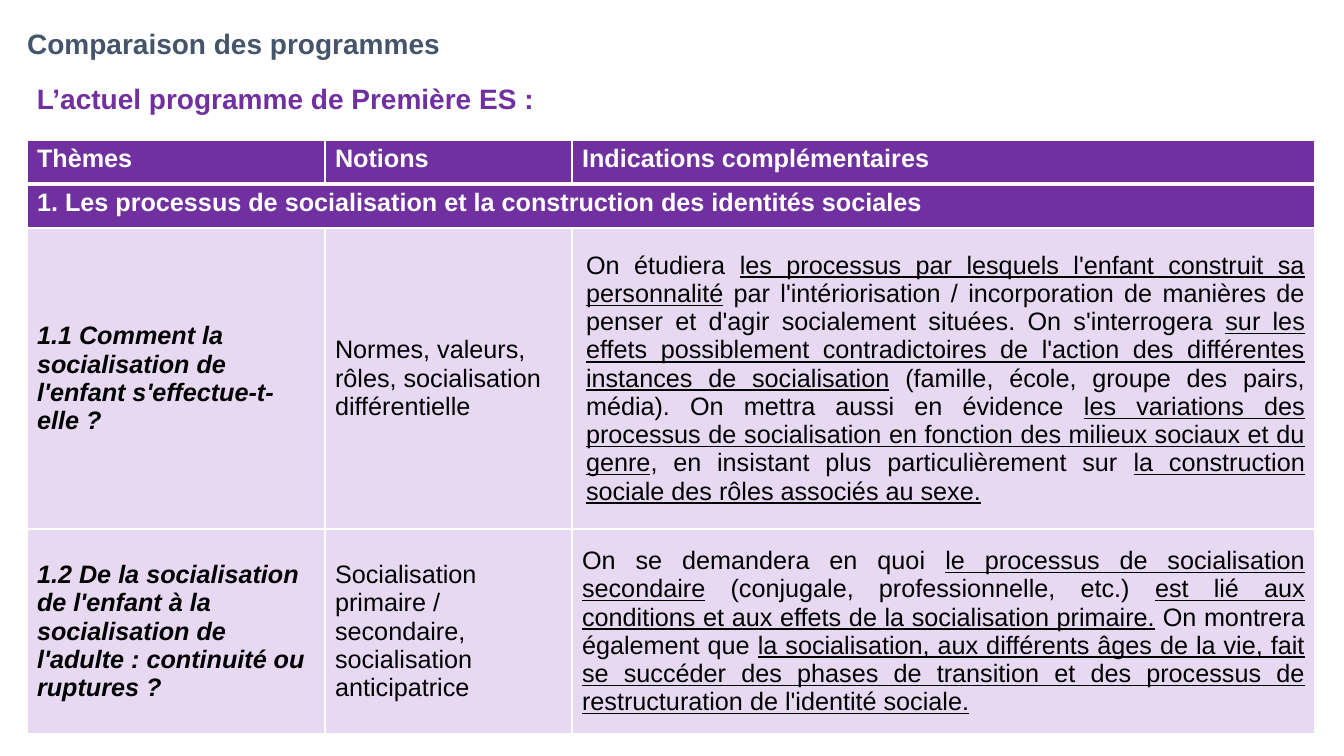
from lxml.etree import SubElement
from pptx import Presentation
from pptx.dml.color import RGBColor
from pptx.enum.text import MSO_ANCHOR, MSO_AUTO_SIZE, PP_ALIGN
from pptx.oxml.ns import qn
from pptx.util import Pt

EMU_PER_PX = 914400 / 100.8
COLORS = {"slate": "44546A", "purple": "7030A0", "lilac": "E8D9F3",
          "white": "FFFFFF", "black": "000000"}


def px(length):
    return round(length * EMU_PER_PX)


def add_span(para, text, size, color, bold=False, italic=False, underline=False):
    span = para.add_run()
    span.text = text
    font = span.font
    font.name, font.size = "Arial", Pt(size)
    font.bold, font.italic, font.underline = bold, italic, underline
    font.color.rgb = RGBColor.from_string(COLORS[color])


deck = Presentation()
deck.slide_width, deck.slide_height = px(1344), px(756)
page = deck.slides.add_slide(deck.slide_layouts[5])

# Title and subtitle
title = page.shapes.title
title.left, title.top, title.width, title.height = px(17), px(21), px(1097), px(44)
subtitle = page.shapes.add_textbox(px(27), px(77), px(701), px(44))
for box, text, color in [
    (title, "Comparaison des programmes", "slate"),
    (subtitle, "L’actuel programme de Première ES :", "purple"),
]:
    frame = box.text_frame
    frame.word_wrap = True
    frame.auto_size = MSO_AUTO_SIZE.NONE
    frame.vertical_anchor = MSO_ANCHOR.TOP
    frame.paragraphs[0].alignment = PP_ALIGN.LEFT
    add_span(frame.paragraphs[0], text, 20, color, bold=True)

# Table text: each cell lists its runs, every second run is underlined
rows = [
    [["Thèmes"], ["Notions"], ["Indications complémentaires"]],
    [["1. Les processus de socialisation et la construction des identités sociales"], [], []],
    [
        ["1.1 Comment la socialisation de l'enfant s'effectue-t-elle ?"],
        ["Normes, valeurs, rôles, socialisation différentielle"],
        [
            "On étudiera ",
            "les processus par lesquels l'enfant construit sa personnalité",
            " par l'intériorisation / incorporation de manières de penser et d'agir "
            "socialement situées. On s'interrogera ",
            "sur les effets possiblement contradictoires de l'action des différentes "
            "instances de socialisation",
            " (famille, école, groupe des pairs, média). On mettra aussi en évidence ",
            "les variations des processus de socialisation en fonction des milieux "
            "sociaux et du genre",
            ", en insistant plus particulièrement sur ",
            "la construction sociale des rôles associés au sexe.",
        ],
    ],
    [
        ["1.2 De la socialisation de l'enfant à la socialisation de l'adulte : "
         "continuité ou ruptures ?"],
        ["Socialisation primaire / secondaire, socialisation anticipatrice"],
        [
            "On se demandera en quoi ",
            "le processus de socialisation secondaire",
            " (conjugale, professionnelle, etc.) ",
            "est lié aux conditions et aux effets de la socialisation primaire.",
            " On montrera également que ",
            "la socialisation, aux différents âges de la vie, fait se succéder des phases "
            "de transition et des processus de restructuration de l'identité sociale.",
        ],
    ],
]
column_widths = [298, 247, 743]
row_heights = [44, 44, 301, 205]

# Table grid
table = page.shapes.add_table(len(rows), len(column_widths), px(27), px(140),
                              px(sum(column_widths)), px(sum(row_heights))).table
for column, width in zip(table.columns, column_widths):
    column.width = px(width)
for row, height in zip(table.rows, row_heights):
    row.height = px(height)
table.cell(1, 0).merge(table.cell(1, 2))

# Table cells
for r, row in enumerate(rows):
    is_heading = r < 2
    for c, spans in enumerate(row):
        cell = table.cell(r, c)

        # White borders, thicker below the first row
        properties = cell._tc.get_or_add_tcPr()
        for side in "LRTB":
            thick = (r, side) in [(0, "B"), (1, "T")]
            line = SubElement(properties, qn(f"a:ln{side}"), w=str(Pt(3 if thick else 1)))
            fill = SubElement(line, qn("a:solidFill"))
            SubElement(fill, qn("a:srgbClr"), val=COLORS["white"])

        cell.fill.solid()
        cell.fill.fore_color.rgb = RGBColor.from_string(
            COLORS["purple" if is_heading else "lilac"])
        cell.vertical_anchor = MSO_ANCHOR.TOP if is_heading else MSO_ANCHOR.MIDDLE

        para = cell.text_frame.paragraphs[0]
        if not is_heading and c == 2:
            para.alignment = PP_ALIGN.JUSTIFY
        for i, text in enumerate(spans):
            add_span(para, text, 18, "white" if is_heading else "black",
                     bold=is_heading or c == 0,
                     italic=not is_heading and c == 0,
                     underline=i % 2 == 1)

# Slight indent of the first long paragraph
indented = table.cell(2, 2).text_frame.paragraphs[0]
indented._p.get_or_add_pPr().set("marL", str(px(4)))

deck.save("out.pptx")
